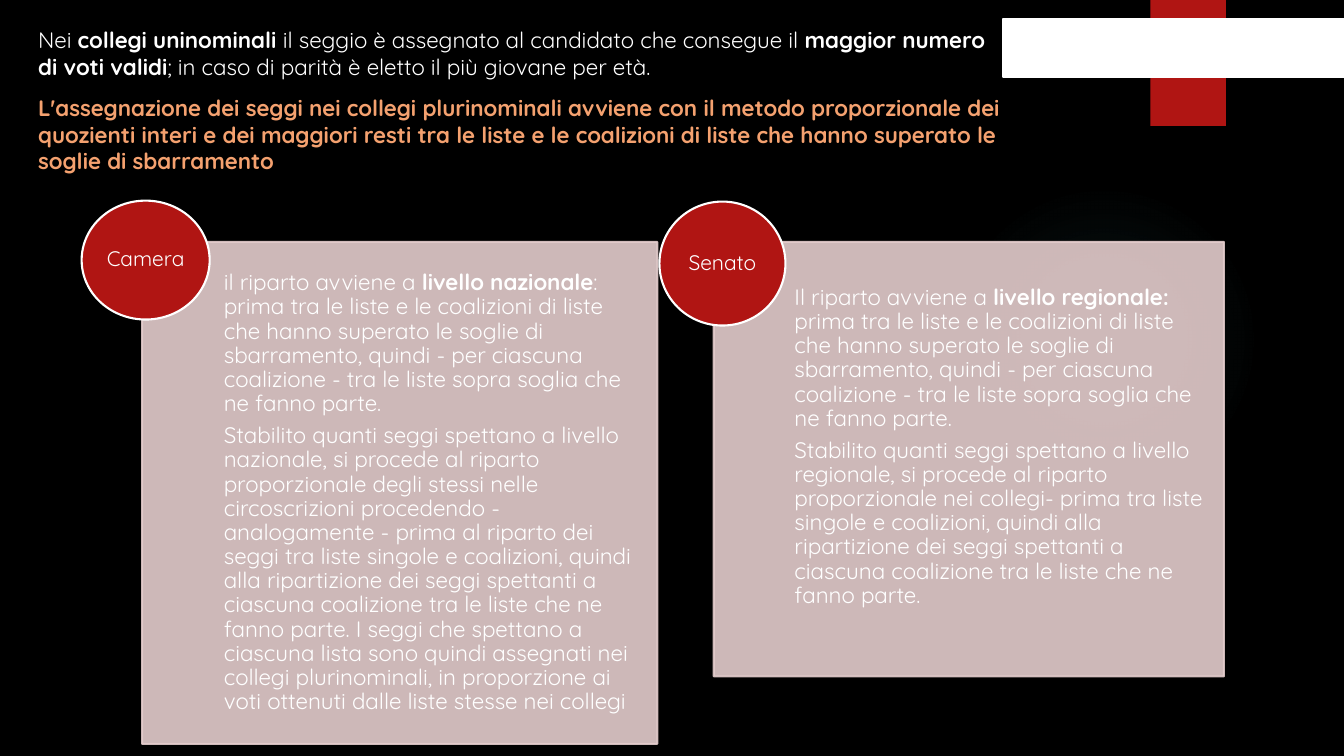
from lxml.etree import SubElement
from pptx import Presentation
from pptx.dml.color import RGBColor
from pptx.enum.shapes import MSO_SHAPE as SHAPE
from pptx.enum.text import MSO_ANCHOR as ANCHOR, PP_ALIGN as ALIGN
from pptx.oxml import parse_xml
from pptx.oxml.ns import nsdecls, qn
from pptx.util import Emu, Pt

PX = 9144  # 100 px to the inch
FONT = "Quicksand"
COLORS = {
    "black": "000000",
    "white": "FFFFFF",
    "red": "B01513",
    "pink": "E4CCCC",
    "orange": "F4A16F",
    "glow": "50B9C1",
}

INTRO = [
    [("Nei ", False), ("collegi uninominali ", True),
     ("il seggio è assegnato al candidato che consegue il ", False),
     ("maggior numero di voti validi", True),
     ("; in caso di parità è eletto il più giovane per età.", False)],
    [("L'assegnazione dei seggi nei collegi plurinominali avviene con il metodo "
      "proporzionale dei quozienti interi e dei maggiori resti tra le liste e le "
      "coalizioni di liste che hanno superato le soglie di sbarramento", True)],
]
FIRST_STEP = ("prima tra le liste e le coalizioni di liste che hanno superato le soglie "
              "di sbarramento, quindi - per ciascuna coalizione - tra le liste sopra "
              "soglia che ne fanno parte.")
CAMERA = [
    [("il riparto avviene a ", False), ("livello nazionale", True),
     (": " + FIRST_STEP, False)],
    [("Stabilito quanti seggi spettano a livello nazionale, si procede al riparto "
      "proporzionale degli stessi nelle circoscrizioni procedendo - analogamente - "
      "prima al riparto dei seggi tra liste singole e coalizioni, quindi alla "
      "ripartizione dei seggi spettanti a ciascuna coalizione tra le liste che ne "
      "fanno parte. I seggi che spettano a ciascuna lista sono quindi assegnati nei "
      "collegi plurinominali, in proporzione ai voti ottenuti dalle liste stesse nei "
      "collegi", False)],
]
SENATO = [
    [("Il riparto avviene a ", False), ("livello regionale: ", True),
     (FIRST_STEP, False)],
    [("Stabilito quanti seggi spettano a livello regionale, si procede al riparto "
      "proporzionale nei collegi- prima tra liste singole e coalizioni, quindi alla "
      "ripartizione dei seggi spettanti a ciascuna coalizione tra le liste che ne "
      "fanno parte.", False)],
]


def rgb(name):
    return RGBColor.from_string(COLORS[name])


def write(tf, paragraphs, size=16, colors=("white",), align=ALIGN.LEFT,
          anchor=ANCHOR.TOP, insets=(10, 5, 10, 5), spacing=None, before=0, after=0):
    """Fill a text frame; each paragraph is a list of (text, bold) pairs."""
    tf.word_wrap = True
    tf.vertical_anchor = anchor
    tf.margin_left, tf.margin_top, tf.margin_right, tf.margin_bottom = (
        Emu(inset * PX) for inset in insets)
    for i, runs in enumerate(paragraphs):
        p = tf.add_paragraph() if i else tf.paragraphs[0]
        p.alignment = align
        p.space_before = Pt(before if i else 0)
        p.space_after = Pt(after)
        if spacing:
            p.line_spacing = spacing
        for text, bold in runs:
            r = p.add_run()
            r.text = text
            r.font.name, r.font.size, r.font.bold = FONT, Pt(size), bold
            r.font.color.rgb = rgb(colors[i % len(colors)])


class Deck:
    def __init__(self, width, height):
        self.prs = Presentation()
        self.prs.slide_width, self.prs.slide_height = Emu(width * PX), Emu(height * PX)
        self.s = self.prs.slides.add_slide(self.prs.slide_layouts[6])
        background = self.s.background.fill
        background.solid()
        background.fore_color.rgb = rgb("black")

    def shape(self, kind, box, fill=None, line=None, alpha=None):
        sp = self.s.shapes.add_shape(kind, *(Emu(v * PX) for v in box))
        sp.shadow.inherit = False
        if fill:
            sp.fill.solid()
            sp.fill.fore_color.rgb = rgb(fill)
        if line:
            sp.line.color.rgb = rgb(line)
            sp.line.width = Pt(1.5)
        else:
            sp.line.fill.background()
        if alpha:
            for color in list(sp.element.spPr.iter(qn("a:srgbClr"))):
                SubElement(color, qn("a:alpha")).set("val", str(alpha * 1000))
        return sp

    def glow(self, box, stops):
        """Draw a circle that fades outwards; stops are (position, opacity) in percent."""
        sp = self.shape(SHAPE.OVAL, box)
        gs = "".join(
            f'<a:gs pos="{pos * 1000}"><a:srgbClr val="{COLORS["glow"]}">'
            f'<a:alpha val="{opacity * 1000}"/></a:srgbClr></a:gs>'
            for pos, opacity in stops)
        sp.element.spPr.find(qn("a:prstGeom")).addnext(parse_xml(
            f'<a:gradFill {nsdecls("a")}><a:gsLst>{gs}</a:gsLst><a:path path="circle">'
            '<a:fillToRect l="50000" t="50000" r="50000" b="50000"/></a:path></a:gradFill>'))

    def text(self, box, paragraphs, **style):
        tb = self.s.shapes.add_textbox(*(Emu(v * PX) for v in box))
        write(tb.text_frame, paragraphs, **style)

    def chamber(self, name, panel, circle, paragraphs, bottom):
        """Draw a panel of text with a named circle on its corner."""
        left, top, width, height = panel
        indent = width * 16 // 100
        self.shape(SHAPE.RECTANGLE, panel, "pink", "pink", alpha=90)
        self.text((left + indent, top, width - indent, height), paragraphs,
                  anchor=ANCHOR.MIDDLE, insets=(0, 12, 12, bottom), spacing=0.9, after=5.6)
        badge = self.shape(SHAPE.OVAL, circle, "red", "white")
        write(badge.text_frame, [[(name, False)]], size=15, align=ALIGN.CENTER,
              anchor=ANCHOR.MIDDLE, insets=(0, 0, 0, 0), spacing=0.9, after=5.25)


def main():
    deck = Deck(1333, 750)
    deck.glow((941, 183, 308, 308), [(0, 7), (36, 6), (69, 0)])
    deck.shape(SHAPE.RECTANGLE, (1141, 0, 75, 125), "red")
    deck.shape(SHAPE.RECTANGLE, (995, 19, 339, 57), "white", "white")
    deck.text((28, 21, 978, 164), INTRO, colors=("white", "orange"), before=10)
    deck.chamber("Camera", (141, 240, 511, 498), (81, 199, 127, 118), CAMERA, bottom=12)
    deck.chamber("Senato", (708, 240, 506, 431), (654, 200, 125, 123), SENATO, bottom=36)
    deck.prs.save("out.pptx")


if __name__ == "__main__":
    main()
